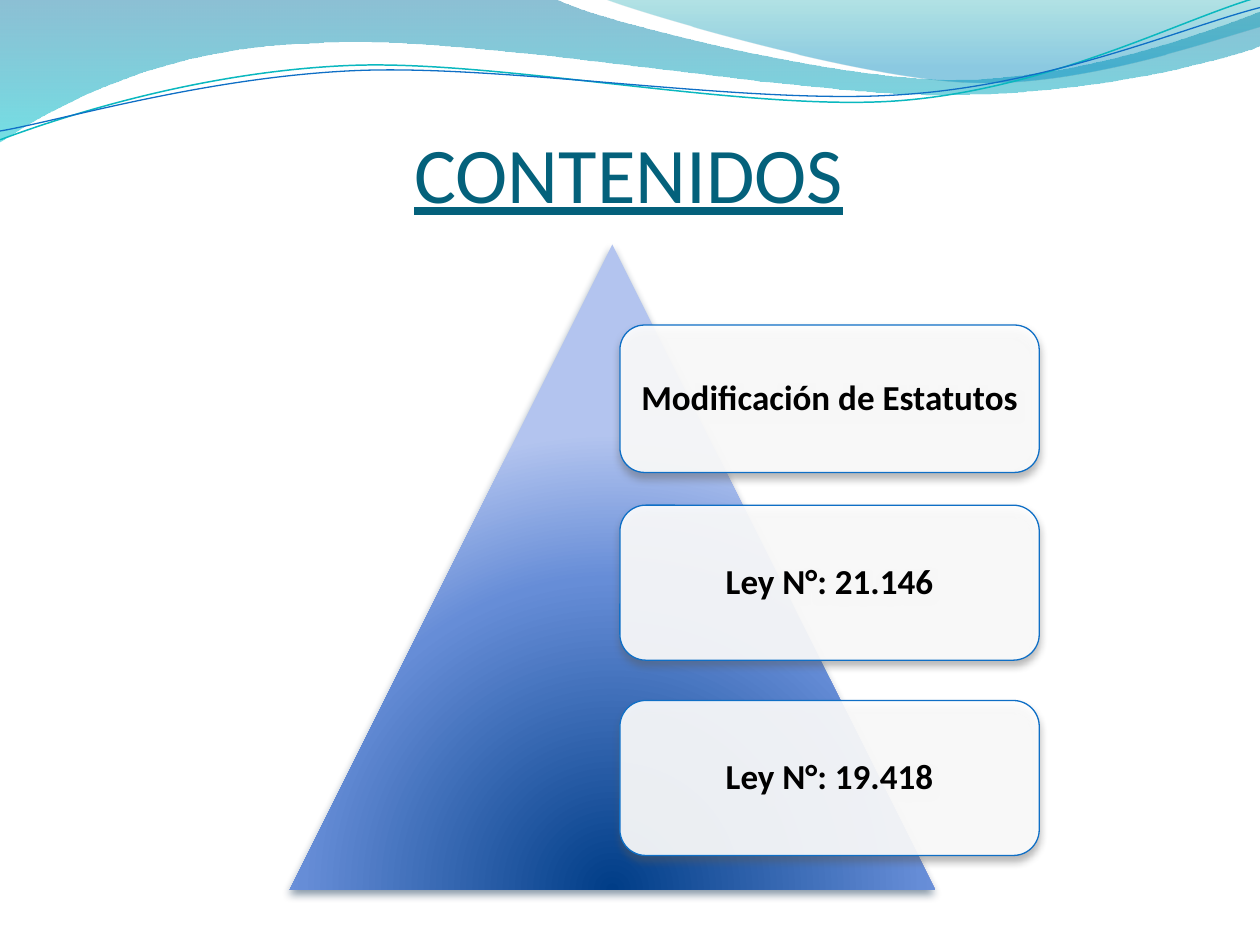
from math import cos, radians, sin

from lxml import etree
from pptx import Presentation
from pptx.dml.color import RGBColor
from pptx.enum.shapes import MSO_SHAPE
from pptx.enum.text import MSO_ANCHOR, PP_ALIGN
from pptx.oxml.ns import qn
from pptx.util import Inches, Pt

TRIANGLE, ROUND = MSO_SHAPE.ISOSCELES_TRIANGLE, MSO_SHAPE.ROUNDED_RECTANGLE
MIDDLE, BOTTOM, CENTER = MSO_ANCHOR.MIDDLE, MSO_ANCHOR.BOTTOM, PP_ALIGN.CENTER

WHITE = RGBColor(0xFF, 0xFF, 0xFF)
BLACK = RGBColor(0x00, 0x00, 0x00)
TITLE = RGBColor(0x04, 0x61, 0x7B)
BLUE = RGBColor(0x0F, 0x6F, 0xC6)
TEAL = RGBColor(0x0A, 0xB8, 0xBF)
DEEP = RGBColor(0x00, 0x74, 0xA1)
AQUA = RGBColor(0x00, 0xC6, 0xCF)
SEA = RGBColor(0x00, 0xA1, 0xA9)
SKY = RGBColor(0x00, 0x8B, 0xBF)
NAVY = RGBColor(0x00, 0x3D, 0x87)
MID = RGBColor(0x66, 0x8D, 0xD7)
PALE = RGBColor(0xB3, 0xC4, 0xEF)
NAVY_SHADOW = RGBColor(0x04, 0x27, 0x47)
GREY_SHADOW = RGBColor(0x5A, 0x5A, 0x5A)

SLIDE_W, SLIDE_H = 10, 7.5
WAVE_TILT = -2.7
WAVE_CENTER = (4.99, 0.58)

BANDS = [
    ([[(0, 0)], [(4.4, -0.01)],
      [(4.76, 0.17), (6.64, 0.63), (7.58, 0.63)],
      [(8.53, 0.63), (9.58, 0.26), (10, 0.09)],
      [(10.01, 0.36)],
      [(9.83, 0.44), (8.7, 0.76), (7.46, 0.75)],
      [(6.22, 0.75), (3.82, 0.28), (2.57, 0.34)],
      [(1.29, 0.36), (0.46, 0.83), (-0.01, 1.13)],
      [(0, 0)]],
     [(0, DEEP, 45), (100, AQUA, 55)]),
    ([[(4.79, -0.01)],
      [(5.09, 0.11), (6.82, 0.62), (7.69, 0.65)],
      [(8.56, 0.69), (9.61, 0.32), (10, 0.21)],
      [(10, 0)], [(4.79, -0.01)]],
     [(0, SEA, 30), (80, SKY, 45)]),
]
WAVES = [
    ([[(0, 1.11)],
      [(0.48, 0.93), (1.58, 0.57), (2.77, 0.52)],
      [(3.95, 0.47), (5.93, 0.89), (7.13, 0.8)],
      [(8.33, 0.71), (9.38, 0.15), (9.98, -0.02)]], TEAL, 0.85),
    ([[(0, 1.04)],
      [(0.47, 0.96), (1.64, 0.61), (2.83, 0.56)],
      [(4.03, 0.51), (5.97, 0.84), (7.17, 0.75)],
      [(8.36, 0.67), (9.41, 0.21), (10, 0.06)]], BLUE, 0.75),
]
CARDS = [
    ("Ley N°: 19.418", 5.56, 1.23),
    ("Ley N°: 21.146", 4.01, 1.23),
    ("Modificación de Estatutos", 2.58, 1.17),
]
TITLE_FORMAT = {"size": Pt(45), "name": "Calibri", "underline": True}
CARD_FORMAT = {"size": Pt(20), "name": "Calibri", "bold": True}


def add(parent, tag, **attrs):
    return etree.SubElement(parent, qn(tag), {k: str(v) for k, v in attrs.items()})


def add_color(parent, color, opacity):
    clr = add(parent, "a:srgbClr", val=color)
    if opacity < 100:
        add(clr, "a:alpha", val=opacity * 1000)


def set_gradient(sp, stops, center=None):
    sp.fill.background()
    spPr = sp._element.spPr
    grad = etree.Element(qn("a:gradFill"), rotWithShape="1")
    gs_lst = add(grad, "a:gsLst")
    for pos, color, opacity in stops:
        add_color(add(gs_lst, "a:gs", pos=pos * 1000), color, opacity)
    if center:
        circle = add(grad, "a:path", path="circle")
        add(circle, "a:fillToRect", **{k: v * 1000 for k, v in center.items()})
    else:
        add(grad, "a:lin", ang=90 * 60000, scaled=1)
    spPr.replace(spPr.find(qn("a:noFill")), grad)


def set_shadow(sp, color):
    sp.shadow.inherit = False
    effects = sp._element.spPr.find(qn("a:effectLst"))
    shadow = add(effects, "a:outerShdw", blurRad=Pt(4.5), dist=Pt(3),
                 dir=90 * 60000, rotWithShape=0)
    add_color(shadow, color, 48)


def turn(point, angle):
    cx, cy = WAVE_CENTER
    dx, dy = point[0] - cx, point[1] - cy
    c, n = cos(radians(angle)), sin(radians(angle))
    return cx + dx * c - dy * n, cy + dx * n + dy * c


def add_outline(s, segments, close):
    segments = [[(Inches(x), Inches(y)) for x, y in seg] for seg in segments]
    anchors = [seg[-1] for seg in segments]
    builder = s.shapes.build_freeform(*anchors[0], scale=1.0)
    builder.add_line_segments(anchors[1:], close=close)
    sp = builder.convert_to_shape()
    sp.shadow.inherit = False
    lines = list(sp._element.iter(qn("a:lnTo")))
    for line, seg in zip(lines, segments[1:]):
        if len(seg) == 3:
            curve = etree.Element(qn("a:cubicBezTo"))
            for x, y in seg:
                add(curve, "a:pt", x=x - sp.left, y=y - sp.top)
            line.getparent().replace(line, curve)
    return sp


def write(tf, text, anchor, color, formats, insets):
    tf.word_wrap = True
    tf.vertical_anchor = anchor
    for side, inset in zip(("left", "top", "right", "bottom"), insets):
        setattr(tf, "margin_" + side, Inches(inset))
    p = tf.paragraphs[0]
    p.alignment = CENTER
    r = p.add_run()
    r.text = text
    for name, value in formats.items():
        setattr(r.font, name, value)
    r.font.color.rgb = color
    return p


def add_header(s):
    for segments, stops in BANDS:
        sp = add_outline(s, segments, True)
        set_gradient(sp, stops)
        sp.line.fill.background()
    for segments, color, width in WAVES:
        level = [[turn(pt, -WAVE_TILT) for pt in seg] for seg in segments]
        sp = add_outline(s, level, False)
        sp.rotation = WAVE_TILT
        sp.fill.background()
        sp.line.color.rgb = color
        sp.line.width = Pt(width)


def add_title(s, text, box):
    tb = s.shapes.add_textbox(*map(Inches, box))
    write(tb.text_frame, text, BOTTOM, TITLE, TITLE_FORMAT, (0, 0.05, 0, 0))


def add_card(s, text, box):
    sp = s.shapes.add_shape(ROUND, *map(Inches, box))
    sp.fill.solid()
    sp.fill.fore_color.rgb = WHITE
    add(sp._element.spPr.find(qn("a:solidFill"))[0], "a:alpha", val=90000)
    sp.line.color.rgb = BLUE
    sp.line.width = Pt(0.75)
    set_shadow(sp, GREY_SHADOW)
    p = write(sp.text_frame, text, MIDDLE, BLACK, CARD_FORMAT, [0.08] * 4)
    p.line_spacing = 0.9


def add_pyramid(s, box):
    left, top, side, height = box
    sp = s.shapes.add_shape(TRIANGLE, *map(Inches, box))
    set_gradient(sp, [(0, NAVY, 100), (68, MID, 100), (100, PALE, 100)],
                 {"l": 50, "t": 130, "r": 50, "b": -30})
    sp.line.fill.background()
    set_shadow(sp, NAVY_SHADOW)
    card_left, card_width = left + side / 2 + 0.06, side * 0.65
    for text, card_top, card_height in CARDS:
        add_card(s, text, (card_left, card_top, card_width, card_height))


def main():
    prs = Presentation()
    prs.slide_width, prs.slide_height = Inches(SLIDE_W), Inches(SLIDE_H)
    s = prs.slides.add_slide(prs.slide_layouts[6])
    add_header(s)
    add_title(s, "CONTENIDOS", (0.49, 0.49, SLIDE_W * 0.9, SLIDE_H / 6))
    add_pyramid(s, (2.3, 1.94, 5.12, 5.12))
    prs.save("out.pptx")


if __name__ == "__main__":
    main()
